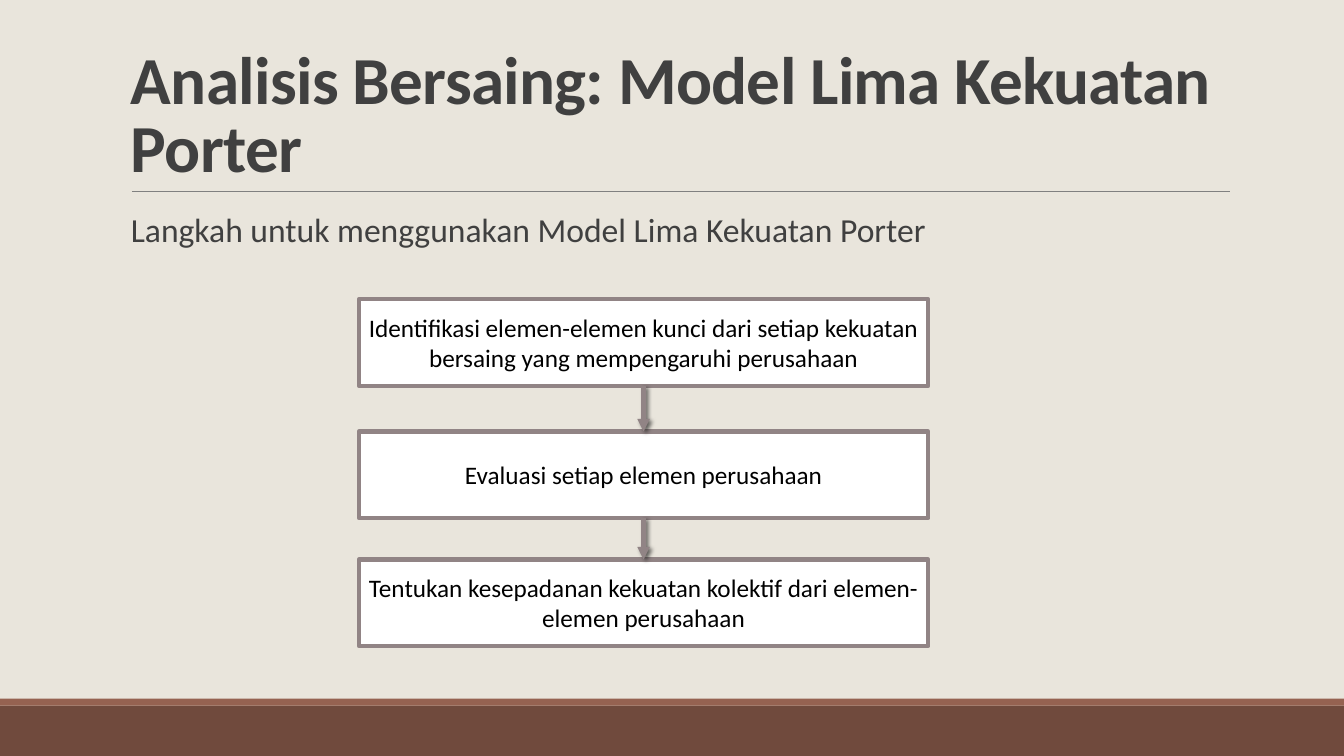
import pptx
import pptx.util
import pptx.dml.color
import pptx.enum.shapes
import pptx.enum.text
import pptx.oxml
import pptx.oxml.ns

Pt = pptx.util.Pt
RGBColor = pptx.dml.color.RGBColor
ANCHOR = pptx.enum.text.MSO_ANCHOR
ALIGN = pptx.enum.text.PP_ALIGN

BACKGROUND = RGBColor(0xE9, 0xE5, 0xDC)
FOOTER_DARK = RGBColor(0x70, 0x4A, 0x3D)
FOOTER_LIGHT = RGBColor(0x95, 0x62, 0x51)
RULE_GREY = RGBColor(0x80, 0x80, 0x80)
TEXT_GREY = RGBColor(0x40, 0x40, 0x40)
STEP_BORDER = RGBColor(0x91, 0x84, 0x85)
WHITE = RGBColor(0xFF, 0xFF, 0xFF)
BLACK = RGBColor(0x00, 0x00, 0x00)

NAMESPACE = pptx.oxml.ns.nsdecls("a")
NO_EFFECT = f"<a:effectLst {NAMESPACE}/>"
ARROW_SHADOW = (
    f'<a:effectLst {NAMESPACE}><a:outerShdw blurRad="38100" dist="25400" '
    'dir="2700000" algn="ctr" rotWithShape="0"><a:srgbClr val="000000">'
    '<a:alpha val="60000"/></a:srgbClr></a:outerShdw></a:effectLst>'
)
ARROWHEAD = f'<a:tailEnd {NAMESPACE} type="triangle"/>'

STEPS = [
    (213.8, "Identifikasi elemen-elemen kunci dari setiap kekuatan bersaing yang mempengaruhi perusahaan"),
    (308.2, "Evaluasi setiap elemen perusahaan"),
    (399.6, "Tentukan kesepadanan kekuatan kolektif dari elemen-elemen perusahaan"),
]


def add_rectangle(shapes, left, top, width, height, fill, border=None):
    """Add a flat rectangle, with a 3 pt border if a border colour is given."""
    shape = shapes.add_shape(
        pptx.enum.shapes.MSO_SHAPE.RECTANGLE, Pt(left), Pt(top), Pt(width), Pt(height)
    )
    shape.shadow.inherit = False
    shape.fill.solid()
    shape.fill.fore_color.rgb = fill
    if border is None:
        shape.line.fill.background()
    else:
        shape.line.color.rgb = border
        shape.line.width = Pt(3)
    return shape


def add_line(shapes, start, end, color, width, effect=NO_EFFECT):
    """Add a straight line with the given effect list."""
    connector = shapes.add_connector(
        pptx.enum.shapes.MSO_CONNECTOR.STRAIGHT, *(Pt(value) for value in start + end)
    )
    connector.line.color.rgb = color
    connector.line.width = Pt(width)
    connector._element.spPr.append(pptx.oxml.parse_xml(effect))
    return connector


def write_text(shape, text, size, color, anchor, align=ALIGN.LEFT):
    """Write one wrapped paragraph into a shape and return the paragraph."""
    frame = shape.text_frame
    frame.word_wrap = True
    frame.vertical_anchor = anchor
    paragraph = frame.paragraphs[0]
    paragraph.alignment = align
    run = paragraph.add_run()
    run.text = text
    run.font.name = "Calibri"
    run.font.size = Pt(size)
    run.font.color.rgb = color
    return paragraph


def add_footer(slide, left, top, width, height):
    """Draw the footer band with its lighter strip on top."""
    strip = 5
    add_rectangle(slide.shapes, left, top + strip, width, height - strip, FOOTER_DARK)
    add_rectangle(slide.shapes, left, top, width, strip, FOOTER_LIGHT)


def add_heading(slide, left, top, width, height):
    """Draw the title, the rule beneath it and the subtitle."""
    bottom = top + height
    add_line(slide.shapes, (left + 7.9, bottom), (left + width - 7.2 + 7.2, bottom), RULE_GREY, 0.5)
    title = slide.shapes.add_textbox(Pt(left), Pt(top), Pt(width), Pt(height))
    paragraph = write_text(
        title, "Analisis Bersaing: Model Lima Kekuatan Porter", 48, TEXT_GREY, ANCHOR.BOTTOM
    )
    paragraph.line_spacing = 0.85
    font = paragraph.runs[0].font
    font.bold = True
    font._element.set("spc", "-50")
    subtitle = slide.shapes.add_textbox(Pt(left), Pt(bottom + 8.6), Pt(width), Pt(38))
    write_text(
        subtitle, "Langkah untuk menggunakan Model Lima Kekuatan Porter", 24, TEXT_GREY, ANCHOR.TOP
    )


def add_flow(slide, left, width, step_height):
    """Draw the steps in a column, joined by shadowed arrows."""
    shapes = slide.shapes.add_group_shape().shapes
    for top, text in STEPS:
        step = add_rectangle(shapes, left, top, width, step_height, WHITE, STEP_BORDER)
        write_text(step, text, 18, BLACK, ANCHOR.MIDDLE, ALIGN.CENTER)
    center = left + width / 2
    for (upper, _), (lower, _) in zip(STEPS, STEPS[1:]):
        arrow = add_line(
            shapes, (center, upper + step_height), (center, lower), STEP_BORDER, 3, ARROW_SHADOW
        )
        arrow.line._get_or_add_ln().append(pptx.oxml.parse_xml(ARROWHEAD))


def main():
    """Build and save the slide."""
    presentation = pptx.Presentation()
    presentation.slide_width = Pt(960)
    presentation.slide_height = Pt(540)
    slide = presentation.slides.add_slide(presentation.slide_layouts[6])
    slide.background.fill.solid()
    slide.background.fill.fore_color.rgb = BACKGROUND
    add_footer(slide, 0, 499, 960, 41)
    add_heading(slide, 86.4, 22.3, 792, 114.5)
    add_flow(slide, 256.3, 406.8, 61.9)
    presentation.save("out.pptx")


if __name__ == "__main__":
    main()
